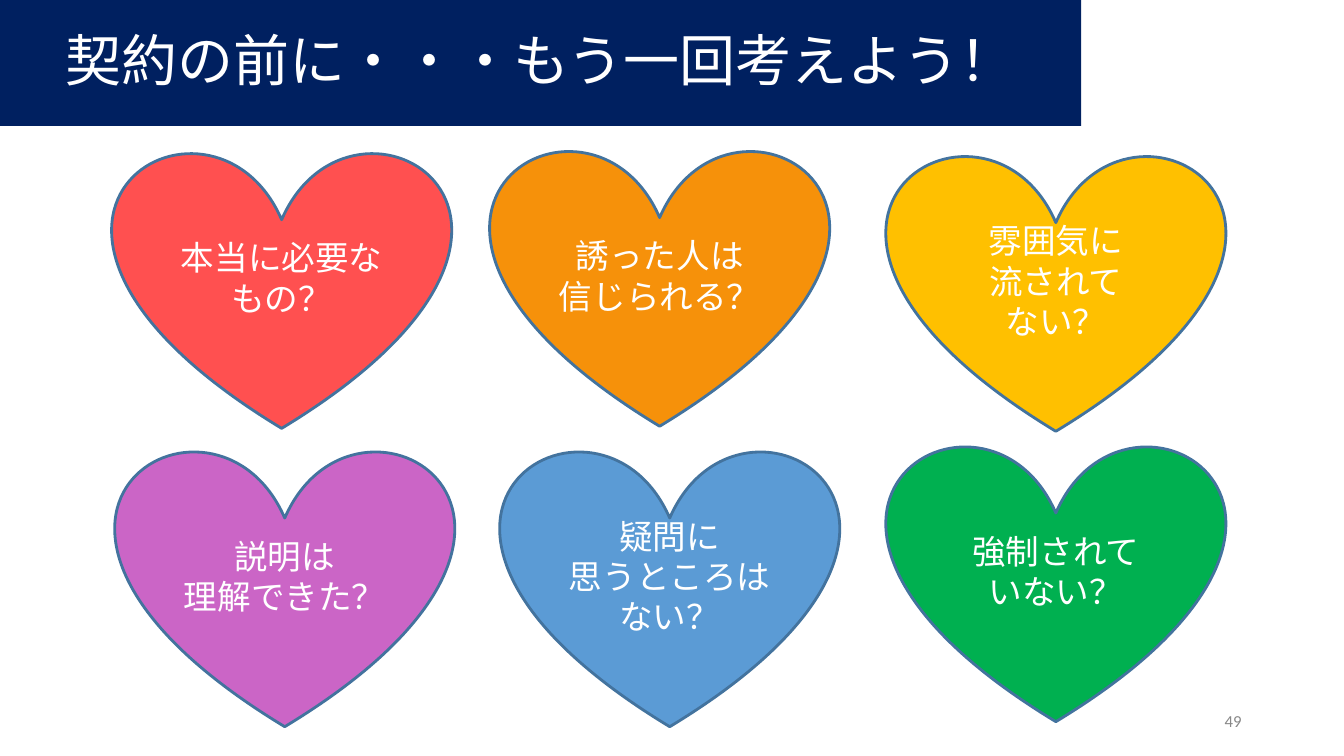
from dataclasses import dataclass

from lxml.etree import SubElement
from pptx import Presentation
from pptx.dml.color import RGBColor as Rgb
from pptx.enum.shapes import MSO_SHAPE as Shape
from pptx.enum.text import MSO_ANCHOR as Anchor, PP_ALIGN as Align
from pptx.oxml.ns import qn
from pptx.text.text import TextFrame
from pptx.util import Pt

COLORS = {
    "navy": "002060", "white": "FFFFFF", "gray": "888888", "edge": "43739E",
    "red": "FF5050", "orange": "F6910A", "yellow": "FFC000",
    "purple": "CB65C6", "blue": "5B9BD5", "green": "00B050",
}
CJK = "Noto Sans CJK JP"
WIDTH, HEIGHT = 241.2, 198.7


@dataclass
class Heart:
    left: float
    top: float
    color: str
    lines: list[str]


HEARTS = [
    Heart(80.6, 107.3, "red", ["本当に必要なもの？"]),
    Heart(350.6, 105.8, "orange", ["誘った人は", "信じられる？"]),
    Heart(633.6, 109.4, "yellow", ["雰囲気に", "流されて", "ない？"]),
    Heart(82.8, 320.4, "purple", ["説明は", "理解できた？"]),
    Heart(357.8, 320.4, "blue", ["疑問に", "思うところは", "ない？"]),
    Heart(633.6, 316.8, "green", ["強制されて", "いない？"]),
]


def tint(name: str) -> Rgb:
    return Rgb.from_string(COLORS[name])


def write(frame: TextFrame, lines: list[str], size: float, face: str,
          color: str = "white", align: Align = Align.CENTER,
          space: float = 1.0) -> None:
    """Fill a frame with one paragraph per line, centred vertically."""
    frame.word_wrap = True
    frame.vertical_anchor = Anchor.MIDDLE
    for i, line in enumerate(lines):
        para = frame.add_paragraph() if i else frame.paragraphs[0]
        para.text = line
        para.alignment = align
        para.line_spacing = space
        para.font.size = Pt(size)
        para.font.color.rgb = tint(color)
        para.font.name = face
        props = para._p.pPr.find(qn("a:defRPr"))
        SubElement(props, qn("a:ea")).set("typeface", CJK)


def main() -> None:
    deck = Presentation()
    deck.slide_width, deck.slide_height = Pt(960), Pt(540)
    shapes = deck.slides.add_slide(deck.slide_layouts[6]).shapes

    title = shapes.add_shape(Shape.RECTANGLE, 0, 0, Pt(772.3), Pt(90))
    title.shadow.inherit = False
    title.fill.solid()
    title.fill.fore_color.rgb = tint("navy")
    title.line.fill.background()
    write(title.text_frame, ["契約の前に・・・もう一回考えよう！"], 40, CJK, space=0.9)

    for heart in HEARTS:
        shape = shapes.add_shape(Shape.HEART, Pt(heart.left), Pt(heart.top),
                                 Pt(WIDTH), Pt(HEIGHT))
        shape.shadow.inherit = False
        shape.fill.solid()
        shape.fill.fore_color.rgb = tint(heart.color)
        shape.line.color.rgb = tint("edge")
        shape.line.width = Pt(2)
        write(shape.text_frame, heart.lines, 24, "Arial")

    number = shapes.add_textbox(Pt(678), Pt(500.5), Pt(216), Pt(28.8))
    write(number.text_frame, ["49"], 12, "Calibri", "gray", Align.RIGHT)

    deck.save("out.pptx")


if __name__ == "__main__":
    main()
